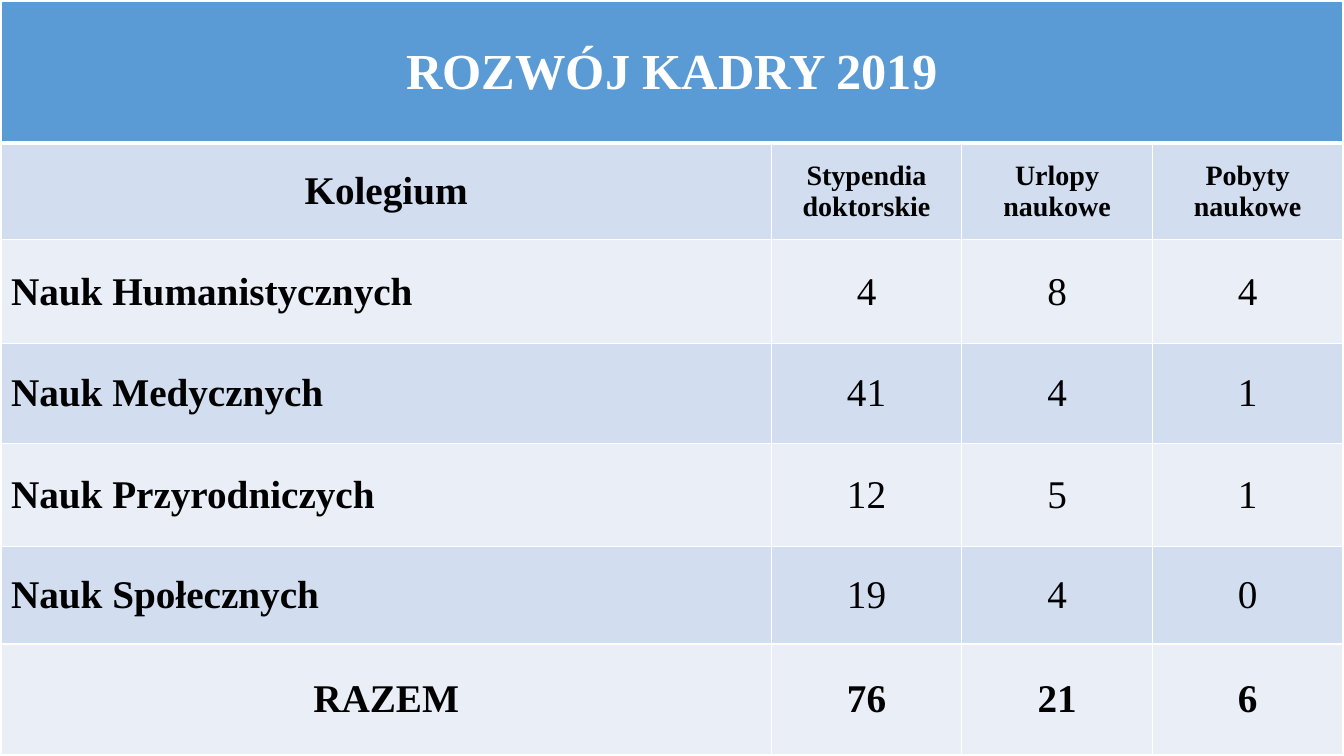
from lxml import etree
from pptx import Presentation
from pptx import util as u
from pptx.dml.color import RGBColor
from pptx.enum import text
from pptx.oxml import ns

WHITE = RGBColor(0xFF, 0xFF, 0xFF)
BLACK = RGBColor(0x00, 0x00, 0x00)
HEADER_BLUE = RGBColor(0x5B, 0x9B, 0xD5)
BAND_DARK = RGBColor(0xD2, 0xDE, 0xEF)
BAND_LIGHT = RGBColor(0xEA, 0xEF, 0xF7)

TITLE = "ROZWÓJ KADRY 2019"
HEADINGS = ["Kolegium", "Stypendia doktorskie", "Urlopy naukowe", "Pobyty naukowe"]
COLLEGES = [
    ["Nauk Humanistycznych", "4", "8", "4"],
    ["Nauk Medycznych", "41", "4", "1"],
    ["Nauk Przyrodniczych", "12", "5", "1"],
    ["Nauk Społecznych", "19", "4", "0"],
]
TOTALS = ["RAZEM", "76", "21", "6"]
COLUMN_WIDTHS = [7.64, 1.89, 1.89, 1.89]
ROW_HEIGHTS = [1.41, 0.96, 1.03, 0.99, 1.02, 0.97, 1.1]


def write(cell, words, size=28, bold=True, color=BLACK, centered=True):
    cell.vertical_anchor = text.MSO_ANCHOR.MIDDLE
    paragraph = cell.text_frame.paragraphs[0]
    paragraph.alignment = text.PP_ALIGN.CENTER if centered else text.PP_ALIGN.LEFT
    run = paragraph.add_run()
    run.text = words
    run.font.name = "Times New Roman"
    run.font.size = u.Pt(size)
    run.font.bold = bold
    run.font.color.rgb = color


class SlideBuilder:
    def __init__(self, slide):
        self.slide = slide
        self.border_color = WHITE

    def add_grid(self, left, top, widths, heights):
        frame = self.slide.shapes.add_table(
            len(heights), len(widths), u.Inches(left), u.Inches(top),
            u.Inches(sum(widths)), u.Inches(sum(heights)))
        table = frame.table
        for column, width in zip(table.columns, widths):
            column.width = u.Inches(width)
        for row, height in zip(table.rows, heights):
            row.height = u.Inches(height)
        return table

    def style_cell(self, cell, fill, top=1, bottom=1):
        properties = cell._tc.get_or_add_tcPr()
        for side, points in (("L", 1), ("R", 1), ("T", top), ("B", bottom)):
            line = etree.SubElement(properties, ns.qn(f"a:ln{side}"), w=str(u.Pt(points)))
            solid = etree.SubElement(line, ns.qn("a:solidFill"))
            etree.SubElement(solid, ns.qn("a:srgbClr"), val=str(self.border_color))
        cell.fill.solid()
        cell.fill.fore_color.rgb = fill

    def add_staff_table(self):
        table = self.add_grid(0.01, 0.01, COLUMN_WIDTHS, ROW_HEIGHTS)
        last_column = len(COLUMN_WIDTHS) - 1
        for column in range(len(COLUMN_WIDTHS)):
            self.style_cell(table.cell(0, column), HEADER_BLUE, bottom=3)
        table.cell(0, 0).merge(table.cell(0, last_column))
        write(table.cell(0, 0), TITLE, size=36, color=WHITE)

        for row, values in enumerate([HEADINGS, *COLLEGES, TOTALS], start=1):
            is_college = values in COLLEGES
            for column, words in enumerate(values):
                cell = table.cell(row, column)
                self.style_cell(cell, BAND_DARK if row % 2 else BAND_LIGHT,
                                top=3 if row == 1 else 1)
                write(cell, words,
                      size=20 if row == 1 and column else 28,
                      bold=not is_college or column == 0,
                      centered=not is_college or column > 0)


def main():
    presentation = Presentation()
    presentation.slide_width = u.Inches(13.33)
    presentation.slide_height = u.Inches(7.5)
    slide = presentation.slides.add_slide(presentation.slide_layouts[6])
    SlideBuilder(slide).add_staff_table()
    presentation.save("out.pptx")


if __name__ == "__main__":
    main()
